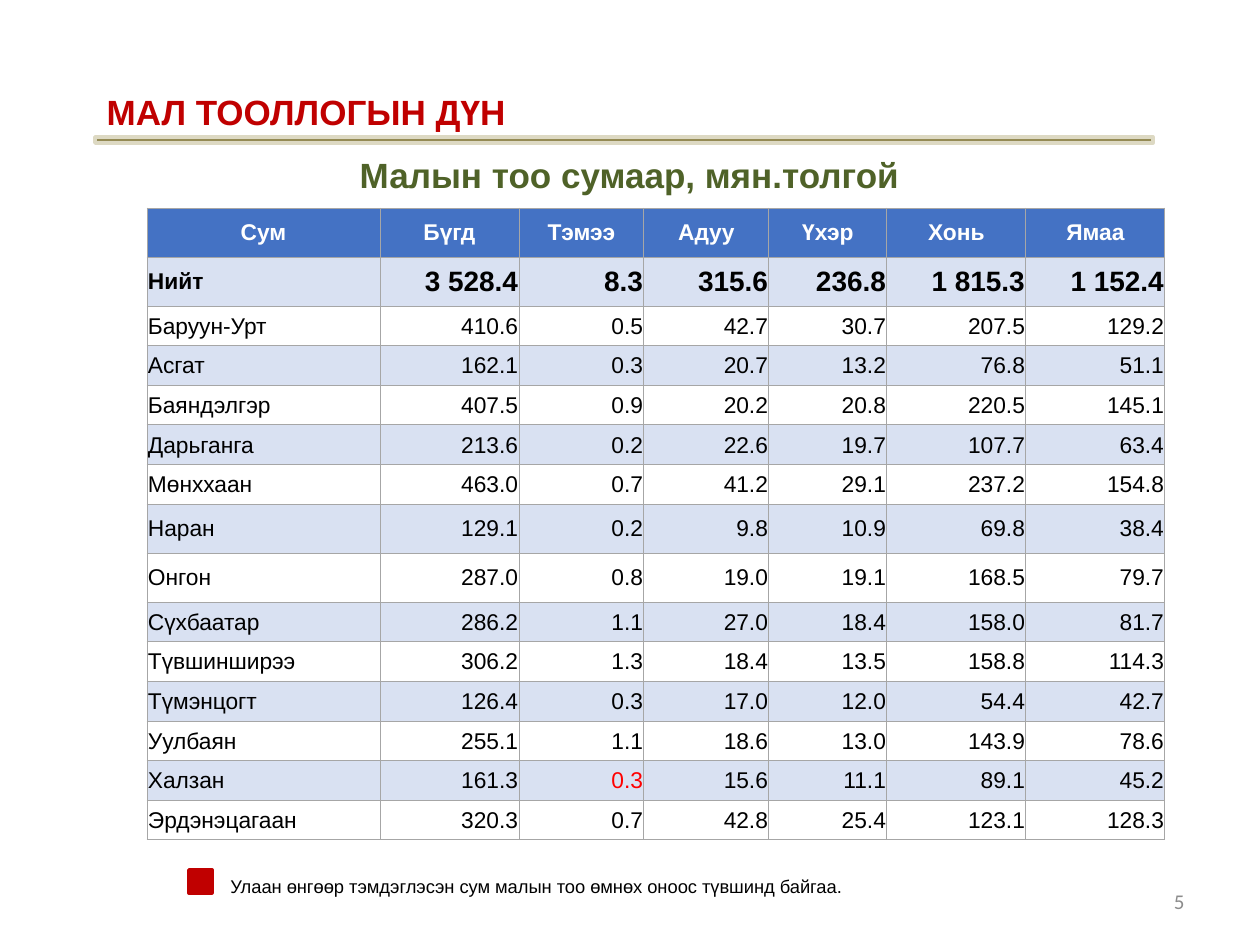
"""Build the livestock census slide with its table by district."""
import pptx
import pptx.dml.color
import pptx.enum.shapes
import pptx.enum.text
import pptx.oxml
import pptx.oxml.ns
import pptx.util

PX = 914400 / 126
ALIGN = pptx.enum.text.PP_ALIGN
ANCHOR = pptx.enum.text.MSO_ANCHOR

COLUMN_WIDTHS = [233, 139, 125, 125, 118, 139, 139]
TABLE_HEIGHT = 632
TALL_HEIGHT = 49
TALL_ROWS = (0, 1, 7, 8)
RED_CELL = (13, 2)
TABLE_ROWS = [line.split("|") for line in (
    "Сум|Бүгд|Тэмээ|Адуу|Үхэр|Хонь|Ямаа",
    "Нийт|3 528.4|8.3|315.6|236.8|1 815.3|1 152.4",
    "Баруун-Урт|410.6|0.5|42.7|30.7|207.5|129.2",
    "Асгат|162.1|0.3|20.7|13.2|76.8|51.1",
    "Баяндэлгэр|407.5|0.9|20.2|20.8|220.5|145.1",
    "Дарьганга|213.6|0.2|22.6|19.7|107.7|63.4",
    "Мөнххаан|463.0|0.7|41.2|29.1|237.2|154.8",
    "Наран|129.1|0.2|9.8|10.9|69.8|38.4",
    "Онгон|287.0|0.8|19.0|19.1|168.5|79.7",
    "Сүхбаатар|286.2|1.1|27.0|18.4|158.0|81.7",
    "Түвшинширээ|306.2|1.3|18.4|13.5|158.8|114.3",
    "Түмэнцогт|126.4|0.3|17.0|12.0|54.4|42.7",
    "Уулбаян|255.1|1.1|18.6|13.0|143.9|78.6",
    "Халзан|161.3|0.3|15.6|11.1|89.1|45.2",
    "Эрдэнэцагаан|320.3|0.7|42.8|25.4|123.1|128.3",
)]


def px(length):
    """Turn pixels into EMU."""
    return pptx.util.Emu(round(length * PX))


def color(value):
    """Turn a hex string into a colour."""
    return pptx.dml.color.RGBColor.from_string(value)


def place(shape, left, top, width, height):
    """Move and size a shape in pixels."""
    shape.left, shape.top = px(left), px(top)
    shape.width, shape.height = px(width), px(height)


def write(text_frame, text, size, ink, bold=False, align=ALIGN.LEFT, font="Arial"):
    """Set one paragraph of formatted text."""
    text_frame.text = text
    paragraph = text_frame.paragraphs[0]
    paragraph.alignment = align
    for run in paragraph.runs:
        run.font.name = font
        run.font.size = pptx.util.Pt(size)
        run.font.bold = bold
        run.font.color.rgb = color(ink)


def add_title(slide, text):
    """Fill and place the title placeholder."""
    title = slide.shapes.title
    place(title, 94, 84, 1166, 55)
    write(title.text_frame, text, 20, "C00000", True, ALIGN.JUSTIFY)
    title.text_frame.vertical_anchor = ANCHOR.TOP
    title.text_frame.auto_size = pptx.enum.text.MSO_AUTO_SIZE.NONE


def add_text(slide, box, text, size, ink, anchor=ANCHOR.TOP, **style):
    """Add a wrapped text box."""
    text_frame = slide.shapes.add_textbox(*map(px, box)).text_frame
    text_frame.word_wrap = True
    text_frame.vertical_anchor = anchor
    write(text_frame, text, size, ink, **style)


def add_rectangle(slide, box, fill, line):
    """Add a filled rectangle with a two-point outline."""
    shape = slide.shapes.add_shape(
        pptx.enum.shapes.MSO_SHAPE.RECTANGLE, *map(px, box))
    shape.shadow.inherit = False
    shape.fill.solid()
    shape.fill.fore_color.rgb = color(fill)
    shape.line.color.rgb = color(line)
    shape.line.width = pptx.util.Pt(2)


def add_borders(cell, ink, width):
    """Draw all four borders of a cell."""
    properties = cell._tc.get_or_add_tcPr()
    for side in ("lnL", "lnR", "lnT", "lnB"):
        properties.append(pptx.oxml.parse_xml(
            f'<a:{side} {pptx.oxml.ns.nsdecls("a")} w="{pptx.util.Pt(width)}">'
            f'<a:solidFill><a:srgbClr val="{ink}"/></a:solidFill></a:{side}>'))


def format_cell(cell, text, row, column):
    """Write one table cell in the style of its row and column."""
    cell.margin_left = cell.margin_right = cell.margin_top = px(1)
    cell.margin_bottom = 0
    cell.vertical_anchor = ANCHOR.MIDDLE
    add_borders(cell, "A6A6A6", 0.5)
    if row % 2 or row == 0:
        cell.fill.solid()
        cell.fill.fore_color.rgb = color("D9E1F2" if row else "4472C4")
    else:
        cell.fill.background()
    if row == 0:
        ink, align = "FFFFFF", ALIGN.CENTER
    else:
        ink = "FF0000" if (row, column) == RED_CELL else "000000"
        align = ALIGN.RIGHT if column else ALIGN.LEFT
    size = 16 if row == 1 and column else 13
    write(cell.text_frame, text, size, ink, row < 2, align)


def add_census_table(slide):
    """Add the table of livestock by district."""
    frame = slide.shapes.add_table(
        len(TABLE_ROWS), len(COLUMN_WIDTHS),
        px(147), px(208), px(sum(COLUMN_WIDTHS)), px(TABLE_HEIGHT))
    table = frame.table
    table.first_row = table.horz_banding = False
    for column, width in zip(table.columns, COLUMN_WIDTHS):
        column.width = px(width)
    short_height = ((TABLE_HEIGHT - TALL_HEIGHT * len(TALL_ROWS))
                    / (len(TABLE_ROWS) - len(TALL_ROWS)))
    for row, texts in enumerate(TABLE_ROWS):
        table.rows[row].height = px(TALL_HEIGHT if row in TALL_ROWS else short_height)
        for column, text in enumerate(texts):
            format_cell(table.cell(row, column), text, row, column)


def main():
    """Build and save the slide."""
    presentation = pptx.Presentation()
    presentation.slide_width, presentation.slide_height = px(1260), px(945)
    slide = presentation.slides.add_slide(presentation.slide_layouts[5])
    add_title(slide, "МАЛ ТООЛЛОГЫН ДҮН")
    add_text(slide, (903, 876, 294, 50), "5", 12, "8C8C8C", ANCHOR.MIDDLE,
             align=ALIGN.RIGHT, font="Calibri")
    add_rectangle(slide, (95, 137, 1058, 6), "948A54", "DDD9C3")
    add_text(slide, (94, 147, 1071, 55), "Малын тоо сумаар, мян.толгой", 20,
             "4F6228", bold=True, align=ALIGN.CENTER)
    add_census_table(slide)
    add_text(slide, (218, 869, 741, 37),
             "Улаан өнгөөр тэмдэглэсэн сум малын тоо өмнөх оноос түвшинд байгаа.",
             10.5, "000000", align=ALIGN.JUSTIFY)
    add_rectangle(slide, (189, 870, 23, 23), "C00000", "C00000")
    presentation.save("out.pptx")


if __name__ == "__main__":
    main()
